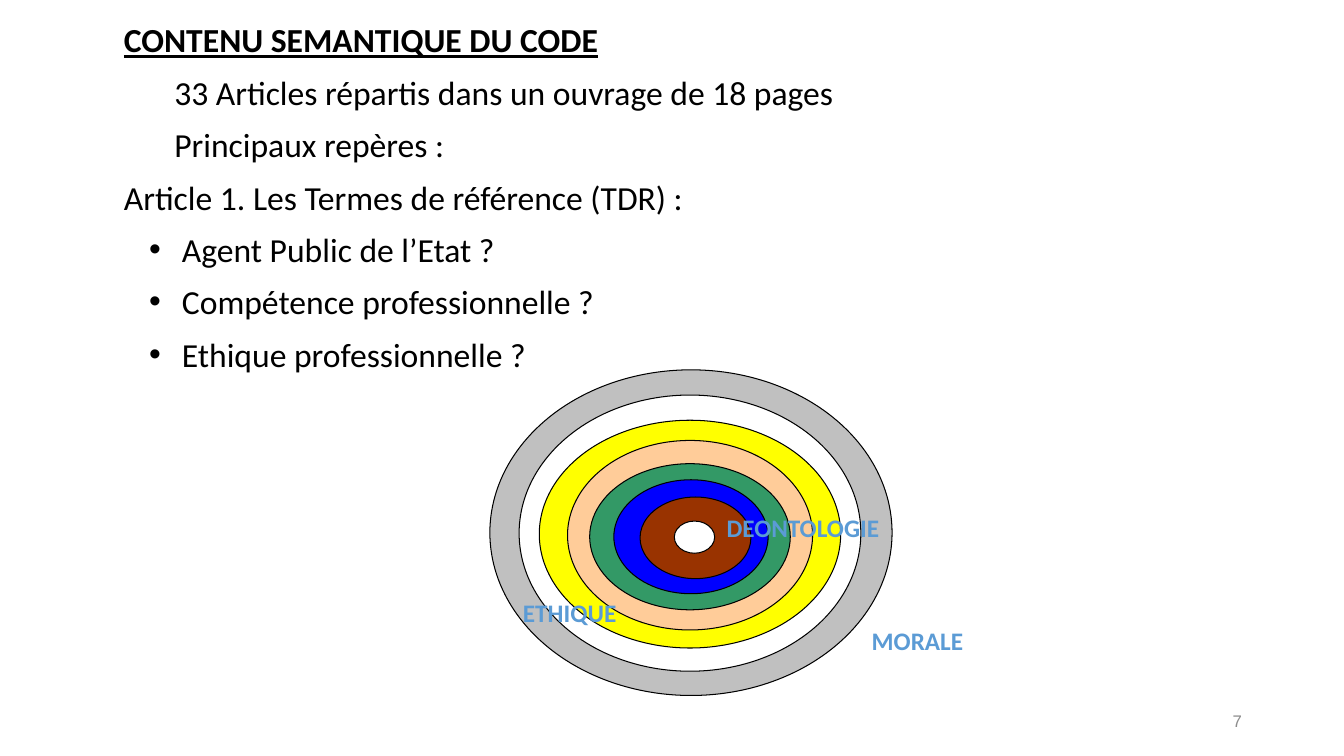
from pptx import Presentation
from pptx.dml.color import RGBColor
from pptx.enum.shapes import MSO_SHAPE
from pptx.enum.text import MSO_ANCHOR, MSO_AUTO_SIZE, PP_ALIGN
from pptx.util import Pt
from lxml.etree import SubElement
from pptx.oxml.ns import qn

COLORS = {
    "black": "000000", "white": "FFFFFF", "silver": "C0C0C0", "yellow": "FFFF00",
    "peach": "FFCC99", "green": "339966", "blue": "0000FF", "brown": "993300",
    "label": "5B9BD5", "number": "8C8C8C",
}

# text, style
OUTLINE = [
    ("CONTENU SEMANTIQUE DU CODE", "heading"),
    ("33 Articles répartis dans un ouvrage de 18 pages", "indented"),
    ("Principaux repères :", "indented"),
    ("Article 1. Les Termes de référence (TDR) :", "plain"),
    (" Agent Public de l’Etat ?", "bullet"),
    (" Compétence professionnelle ?", "bullet"),
    (" Ethique professionnelle ?", "bullet"),
]
OUTLINE_BOX = (81.4, 0, 745.2, 272.2)

# color, (left, top, width, height)
RINGS = [
    ("silver", (349.9, 264.2, 287.3, 232.6)),
    ("white", (370.8, 282.2, 244.1, 197.3)),
    ("yellow", (385.2, 300.2, 215.3, 162.7)),
    ("peach", (405.4, 314.6, 175, 135.4)),
    ("green", (421.2, 331.2, 143.3, 104.4)),
    ("blue", (438.5, 342.7, 110.2, 81.4)),
    ("brown", (457.2, 355, 79.2, 58.3)),
]
CORE = ("white", (481.7, 372.2, 28.8, 23))

LABELS = [
    ("DEONTOLOGIE", (511.9, 362.2, 234.7, 21.6)),
    ("ETHIQUE", (366.5, 423.4, 96.5, 39.6)),
    ("MORALE", (615.6, 442.8, 182.2, 28.8)),
]
PAGE_NUMBER = ("7", (678.2, 500.4, 216, 28.8))


def rgb(color):
    return RGBColor.from_string(COLORS[color])


def add_frame(slide, box, anchor=MSO_ANCHOR.TOP):
    frame = slide.shapes.add_textbox(*map(Pt, box)).text_frame
    frame.word_wrap = True
    frame.vertical_anchor = anchor
    return frame


def add_run(paragraph, text, size, color, font="Calibri", bold=False):
    run = paragraph.add_run()
    run.text = text
    run.font.size = Pt(size)
    run.font.name = font
    run.font.bold = bold
    run.font.color.rgb = rgb(color)
    return run


def add_ring(slide, color, box):
    ring = slide.shapes.add_shape(MSO_SHAPE.OVAL, *map(Pt, box))
    ring.shadow.inherit = False
    ring.fill.solid()
    ring.fill.fore_color.rgb = rgb(color)
    ring.line.color.rgb = rgb("black")
    ring.line.width = Pt(0.75)


def indent(paragraph, style):
    """Set the left margin, and a hanging bullet where the style asks for one."""
    properties = paragraph._p.get_or_add_pPr()
    paragraph.level = 1
    properties.set("marL", str(Pt(36)))
    properties.set("indent", str(Pt(-18 if style == "bullet" else 0)))
    if style == "bullet":
        SubElement(properties, qn("a:buFont")).set("typeface", "Arial")
        SubElement(properties, qn("a:buChar")).set("char", "•")


def add_outline(slide):
    frame = add_frame(slide, OUTLINE_BOX, MSO_ANCHOR.MIDDLE)
    frame.auto_size = MSO_AUTO_SIZE.SHAPE_TO_FIT_TEXT
    for index, (text, style) in enumerate(OUTLINE):
        paragraph = frame.add_paragraph() if index else frame.paragraphs[0]
        paragraph.line_spacing = 1.3
        if style in ("indented", "bullet"):
            indent(paragraph, style)
        heading = style == "heading"
        run = add_run(paragraph, text, 24, "black", bold=heading)
        run.font.underline = heading


def main():
    deck = Presentation()
    deck.slide_width, deck.slide_height = Pt(960), Pt(540)
    slide = deck.slides.add_slide(deck.slide_layouts[6])

    number, number_box = PAGE_NUMBER
    paragraph = add_frame(slide, number_box, MSO_ANCHOR.MIDDLE).paragraphs[0]
    paragraph.alignment = PP_ALIGN.RIGHT
    add_run(paragraph, number, 12, "number", font="Arial")

    for color, box in RINGS:
        add_ring(slide, color, box)
    for text, box in LABELS:
        add_run(add_frame(slide, box).paragraphs[0], text, 18, "label", bold=True)
    add_ring(slide, *CORE)
    add_outline(slide)
    deck.save("out.pptx")


if __name__ == "__main__":
    main()
